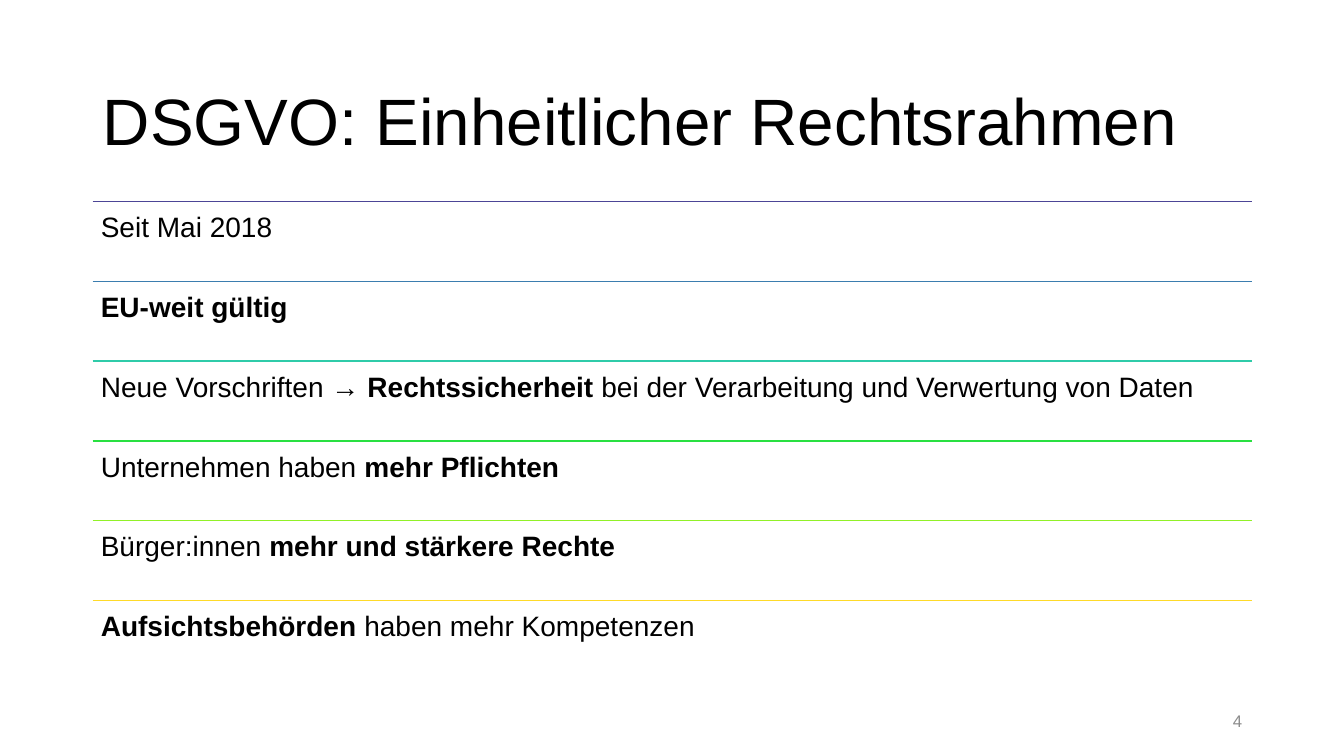
from lxml import etree
from pptx import Presentation
from pptx.dml.color import RGBColor
from pptx.enum.shapes import MSO_CONNECTOR
from pptx.enum.text import MSO_ANCHOR, MSO_AUTO_SIZE, PP_ALIGN
from pptx.oxml.ns import qn
from pptx.util import Inches, Pt

STRAIGHT = MSO_CONNECTOR.STRAIGHT
TOP, MIDDLE = MSO_ANCHOR.TOP, MSO_ANCHOR.MIDDLE
LEFT, RIGHT = PP_ALIGN.LEFT, PP_ALIGN.RIGHT
NO_AUTOFIT = MSO_AUTO_SIZE.NONE
FONT = "Arial"
MARGIN, CONTENT_WIDTH = 0.92, 11.5

ROWS = [
    ("4C4596", [("Seit Mai 2018", False)]),
    ("3B7DAF", [("EU-weit gültig", True)]),
    ("2FCBA9", [("Neue Vorschriften → ", False), ("Rechtssicherheit", True),
                (" bei der Verarbeitung und Verwertung von Daten", False)]),
    ("29E041", [("Unternehmen haben ", False), ("mehr Pflichten", True)]),
    ("91F128", [("Bürger:innen ", False), ("mehr und stärkere Rechte", True)]),
    ("FFDA29", [("Aufsichtsbehörden", True), (" haben mehr Kompetenzen", False)]),
]


def rgb(value):
    """Turn a hex string into a colour."""
    return RGBColor.from_string(value)


def write_text(shape, spans, size, color="000000", align=LEFT, anchor=TOP,
               inset=(0.1, 0.05), line_spacing=1.0, space_after=0):
    """Fill a shape with one paragraph of (text, bold) spans."""
    frame = shape.text_frame
    frame.word_wrap = True
    frame.auto_size = NO_AUTOFIT
    frame.vertical_anchor = anchor
    frame.margin_left = frame.margin_right = Inches(inset[0])
    frame.margin_top = frame.margin_bottom = Inches(inset[1])
    para = frame.paragraphs[0]
    para.alignment = align
    para.line_spacing = line_spacing
    para.space_after = Pt(space_after)
    for text, bold in spans:
        span = para.add_run()
        span.text = text
        span.font.name = FONT
        span.font.size = Pt(size)
        span.font.bold = bold
        span.font.color.rgb = rgb(color)


def add_title(page, text, left, top, width, height):
    """Place the slide title in the given box."""
    title = page.shapes.title
    title.left, title.top = Inches(left), Inches(top)
    title.width, title.height = Inches(width), Inches(height)
    write_text(title, [(text, False)], 46.8, anchor=MIDDLE, line_spacing=0.9)


def add_rule(page, left, top, width, color):
    """Draw a thin horizontal line."""
    rule = page.shapes.add_connector(STRAIGHT, Inches(left), Inches(top),
                                     Inches(left + width), Inches(top))
    rule.line.color.rgb = rgb(color)
    rule.line.width = Pt(1)
    properties = rule._element.find(qn("p:spPr"))
    etree.SubElement(properties, qn("a:effectLst"))


def add_ruled_list(page, rows, left, top, width, height):
    """Stack equally high rows, each under its own coloured line."""
    row_height = height / len(rows)
    for index, (color, spans) in enumerate(rows):
        row_top = top + index * row_height
        add_rule(page, left, row_top, width, color)
        box = page.shapes.add_textbox(Inches(left), Inches(row_top),
                                      Inches(width), Inches(row_height))
        write_text(box, spans, 20, inset=(0.08, 0.08), space_after=7)


def add_page_number(page, number, left, top, width, height):
    """Place the page number at the right of the given box."""
    box = page.shapes.add_textbox(Inches(left), Inches(top),
                                  Inches(width), Inches(height))
    write_text(box, [(number, False)], 12, color="8C8C8C",
               align=RIGHT, anchor=MIDDLE)


def main():
    """Build the deck and save it."""
    deck = Presentation()
    deck.slide_width, deck.slide_height = Inches(13.33), Inches(7.5)
    page = deck.slides.add_slide(deck.slide_layouts.get_by_name("Title Only"))
    add_title(page, "DSGVO: Einheitlicher Rechtsrahmen",
              MARGIN, 0.61, CONTENT_WIDTH, 1.24)
    add_ruled_list(page, ROWS, MARGIN, 2, CONTENT_WIDTH, 4.75)
    add_page_number(page, "4", MARGIN + CONTENT_WIDTH - 3, 6.95, 3, 0.4)
    deck.save("out.pptx")


if __name__ == "__main__":
    main()
